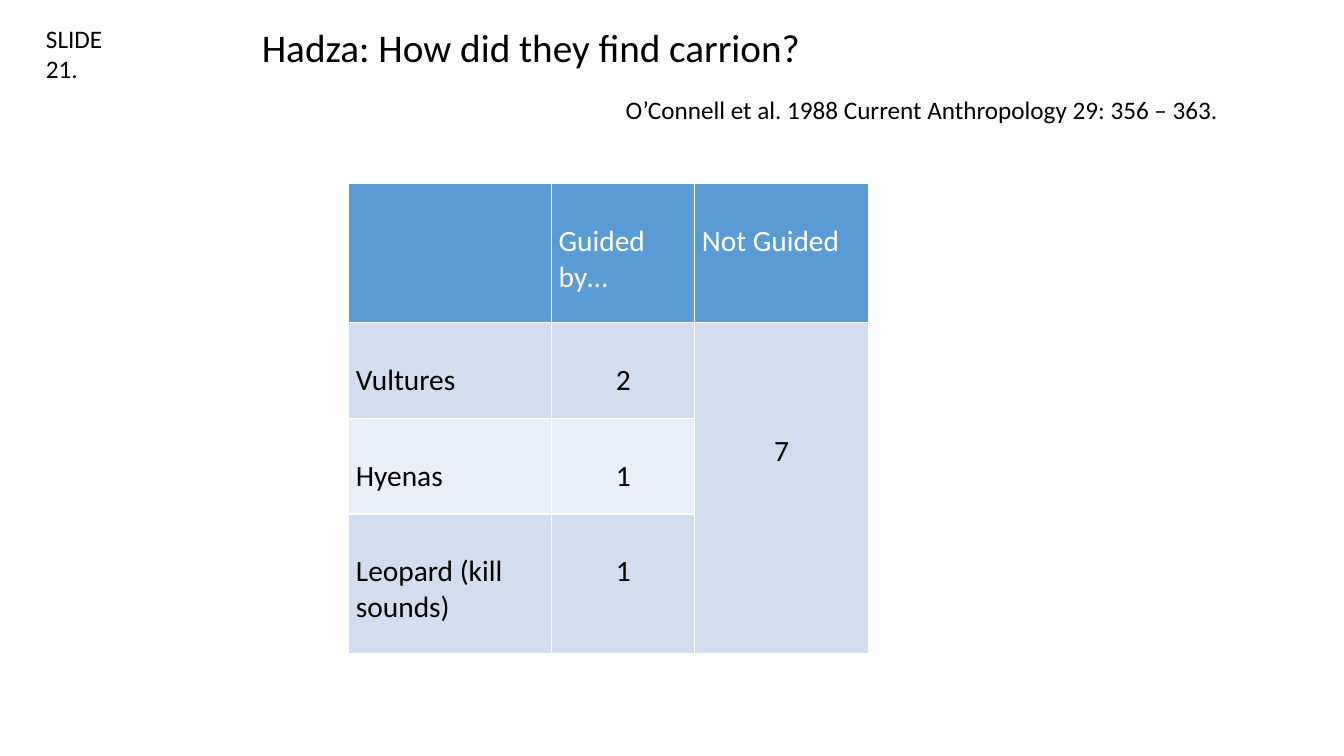
"""Build the slide on how the Hadza found carrion."""
import pptx
import pptx.dml.color
import pptx.enum.text
import pptx.util
from dataclasses import dataclass

Cm = pptx.util.Cm
ALIGN = pptx.enum.text.PP_ALIGN


@dataclass(frozen=True)
class Theme:
    font: str = "Calibri"
    title: int = 28
    table: int = 21
    note: int = 18
    text: str = "000000"
    head_text: str = "FFFFFF"
    head: str = "5B9BD5"
    bands: tuple = ("EAEFF7", "D2DEEF")


theme = Theme()


def write(tf, text, size, color, align=ALIGN.LEFT):
    p = tf.paragraphs[0]
    p.alignment = align
    r = p.add_run()
    r.text = text
    style = {"name": theme.font, "size": pptx.util.Pt(size), "bold": False}
    for name, value in style.items():
        setattr(r.font, name, value)
    r.font.color.rgb = pptx.dml.color.RGBColor.from_string(color)


prs = pptx.Presentation()
prs.slide_width, prs.slide_height = Cm(33.87), Cm(19.05)
s = prs.slides.add_slide(prs.slide_layouts[6])

rows = [
    ("", "Guided by…", "Not Guided"),
    ("Vultures", "2", "7"),
    ("Hyenas", "1", ""),
    ("Leopard (kill sounds)", "1", ""),
]
widths = (5.11, 3.61, 4.37)
heights = (3.51, 2.41, 2.41, 3.51)
line = 0.9
inset = 0.1

tbl = s.shapes.add_table(len(rows), len(widths), Cm(8.79), Cm(4.62),
                         Cm(sum(widths)), Cm(sum(heights))).table
for col, width in zip(tbl.columns, widths):
    col.width = Cm(width)
for row, height in zip(tbl.rows, heights):
    row.height = Cm(height)
tbl.cell(1, 2).merge(tbl.cell(3, 2))

for i, texts in enumerate(rows):
    for j, text in enumerate(texts):
        cell = tbl.cell(i, j)
        fill = theme.bands[i % 2] if i else theme.head
        cell.fill.solid()
        cell.fill.fore_color.rgb = pptx.dml.color.RGBColor.from_string(fill)
        lines_above = 3 if cell.is_merge_origin else 1
        margins = {
            "margin_left": Cm(0.18),
            "margin_right": Cm(0.18),
            "margin_top": Cm(inset + lines_above * line),
            "margin_bottom": Cm(inset),
        }
        if text:
            for name, value in margins.items():
                setattr(cell, name, value)
            write(cell.text_frame, text, theme.table,
                  theme.text if i else theme.head_text,
                  ALIGN.CENTER if i and j else ALIGN.LEFT)

labels = [
    ("O’Connell et al. 1988 Current Anthropology 29: 356 – 363.",
     theme.note, (15.52, 2.26, 16.18, 1.02)),
    ("Hadza: How did they find carrion?", theme.title, (6.35, 0.46, 19.3, 1.45)),
    ("SLIDE 21.", theme.note, (0.91, 0.46, 2.31, 1.8)),
]
for text, size, box in labels:
    tf = s.shapes.add_textbox(*map(Cm, box)).text_frame
    tf.word_wrap = True
    tf.auto_size = pptx.enum.text.MSO_AUTO_SIZE.SHAPE_TO_FIT_TEXT
    write(tf, text, size, theme.text)

prs.save("out.pptx")
